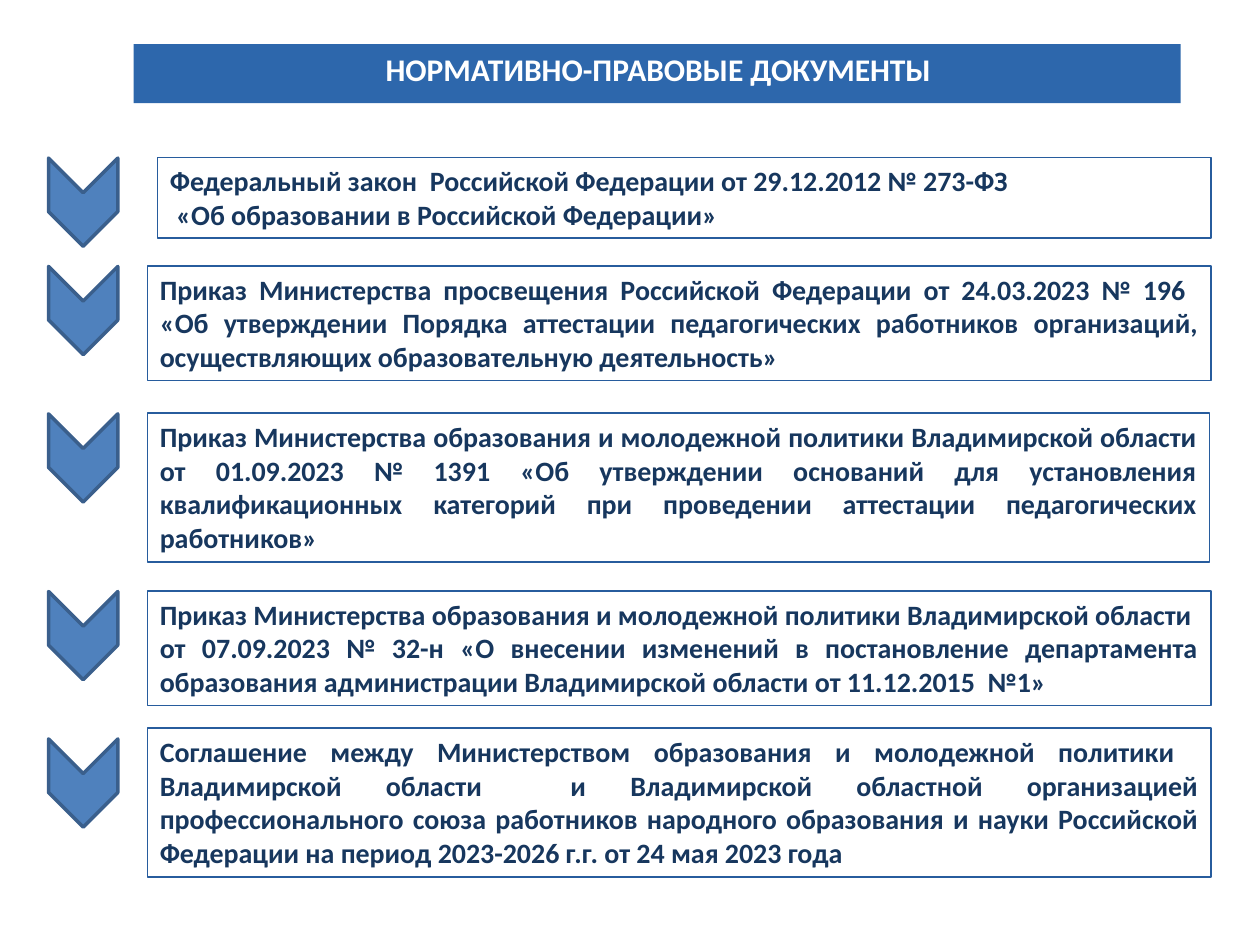
"""Build a slide that lists regulatory documents beside downward chevrons."""
from pptx import Presentation
from pptx.dml.color import RGBColor
from pptx.enum.shapes import MSO_SHAPE as Shape
from pptx.enum.text import MSO_ANCHOR as Anchor, PP_ALIGN as Align
from pptx.util import Inches, Pt

BANNER_BLUE = RGBColor(0x2D, 0x67, 0xAC)
BORDER_BLUE = RGBColor(0x27, 0x5C, 0x9D)
CHEVRON_BLUE = RGBColor(0x4F, 0x81, 0xBD)
CHEVRON_EDGE = RGBColor(0x3A, 0x5F, 0x8C)
TEXT_NAVY = RGBColor(0x17, 0x37, 0x5E)
WHITE = RGBColor(0xFF, 0xFF, 0xFF)

TITLE_FONT = {"name": "Calibri", "size": Pt(18), "bold": True}
BODY_FONT = {"name": "Calibri", "size": Pt(16), "bold": True}
TITLE_FRAME = {"word_wrap": True, "margin_left": 0, "margin_right": 0,
               "margin_top": Inches(0.01), "margin_bottom": 0}
BODY_FRAME = {"word_wrap": True, "vertical_anchor": Anchor.TOP}
LINE_HEIGHT = 0.27
BOX_PADDING = 0.1

DOCUMENTS = [
    {"left": 1.25, "top": 1.25, "width": 8.36, "lines": 2, "chevron": 1.33, "align": Align.LEFT,
     "text": ["Федеральный закон  Российской Федерации от 29.12.2012 № 273-ФЗ",
              " «Об образовании в Российской Федерации»"]},
    {"left": 1.17, "top": 2.11, "width": 8.44, "lines": 3, "chevron": 2.19, "align": Align.JUSTIFY,
     "text": ["Приказ Министерства просвещения Российской Федерации от 24.03.2023 № 196  "
              "«Об утверждении Порядка аттестации педагогических работников организаций, "
              "осуществляющих образовательную деятельность»"]},
    {"left": 1.17, "top": 3.28, "width": 8.43, "lines": 4, "chevron": 3.36, "align": Align.JUSTIFY,
     "text": ["Приказ Министерства образования и молодежной политики Владимирской области "
              "от 01.09.2023 № 1391 «Об утверждении оснований для установления "
              "квалификационных категорий при проведении аттестации педагогических "
              "работников»"]},
    {"left": 1.17, "top": 4.69, "width": 8.44, "lines": 3, "chevron": 4.77, "align": Align.JUSTIFY,
     "text": ["Приказ Министерства образования и молодежной политики Владимирской области  "
              "от 07.09.2023 № 32-н «О внесении изменений в постановление департамента "
              "образования администрации Владимирской области от 11.12.2015  №1»"]},
    {"left": 1.17, "top": 5.78, "width": 8.44, "lines": 4, "chevron": 5.94, "align": Align.JUSTIFY,
     "text": ["Соглашение между Министерством образования и молодежной политики  "
              "Владимирской области  и Владимирской областной организацией "
              "профессионального союза работников народного образования и науки Российской "
              "Федерации на период 2023-2026 г.г. от 24 мая 2023 года"]},
]


def set_values(target, values):
    """Set each named attribute of the target."""
    for name, value in values.items():
        setattr(target, name, value)


def write_text(frame, paragraphs, align, font, color, layout):
    """Fill a text frame with evenly formatted paragraphs."""
    set_values(frame, layout)
    for index, text in enumerate(paragraphs):
        para = frame.add_paragraph() if index else frame.paragraphs[0]
        para.alignment = align
        span = para.add_run()
        span.text = text
        set_values(span.font, font)
        span.font.color.rgb = color


def add_preset(page, kind, place, fill=None, line=None, weight=1):
    """Add a preset shape without shadow, with optional fill and line."""
    shape = page.shapes.add_shape(kind, *map(Inches, place))
    shape.shadow.inherit = False
    for surface, color in ((shape.fill, fill), (shape.line.fill, line)):
        if color is None:
            surface.background()
        else:
            surface.solid()
            surface.fore_color.rgb = color
    if line is not None:
        shape.line.width = Pt(weight)
    return shape


def add_title(page):
    """Add the banner and its centred heading."""
    add_preset(page, Shape.RECTANGLE, (1.06, 0.35, 8.31, 0.47), BANNER_BLUE)
    box = page.shapes.add_textbox(*map(Inches, (1.17, 0.39, 8.11, 0.32)))
    write_text(box.text_frame, ["НОРМАТИВНО-ПРАВОВЫЕ ДОКУМЕНТЫ"], Align.CENTER,
               TITLE_FONT, WHITE, TITLE_FRAME)
    box.text_frame.paragraphs[0].space_before = Pt(1)


def add_document(page, document):
    """Add a bordered document box, as tall as its lines need."""
    height = BOX_PADDING + LINE_HEIGHT * document["lines"]
    place = (document["left"], document["top"], document["width"], height)
    box = add_preset(page, Shape.RECTANGLE, place, line=BORDER_BLUE)
    write_text(box.text_frame, document["text"], document["align"],
               BODY_FONT, TEXT_NAVY, BODY_FRAME)


def add_chevron(page, top):
    """Add a chevron that points down."""
    chevron = add_preset(page, Shape.CHEVRON, (0.31, top, 0.7, 0.55),
                         CHEVRON_BLUE, CHEVRON_EDGE, 2)
    chevron.rotation = 90


def main():
    """Build and save the deck."""
    deck = Presentation()
    set_values(deck, {"slide_width": Inches(10), "slide_height": Inches(7.5)})
    page = deck.slides.add_slide(deck.slide_layouts[6])
    add_title(page)
    for document in DOCUMENTS:
        add_document(page, document)
        add_chevron(page, document["chevron"])
    deck.save("out.pptx")


if __name__ == "__main__":
    main()
